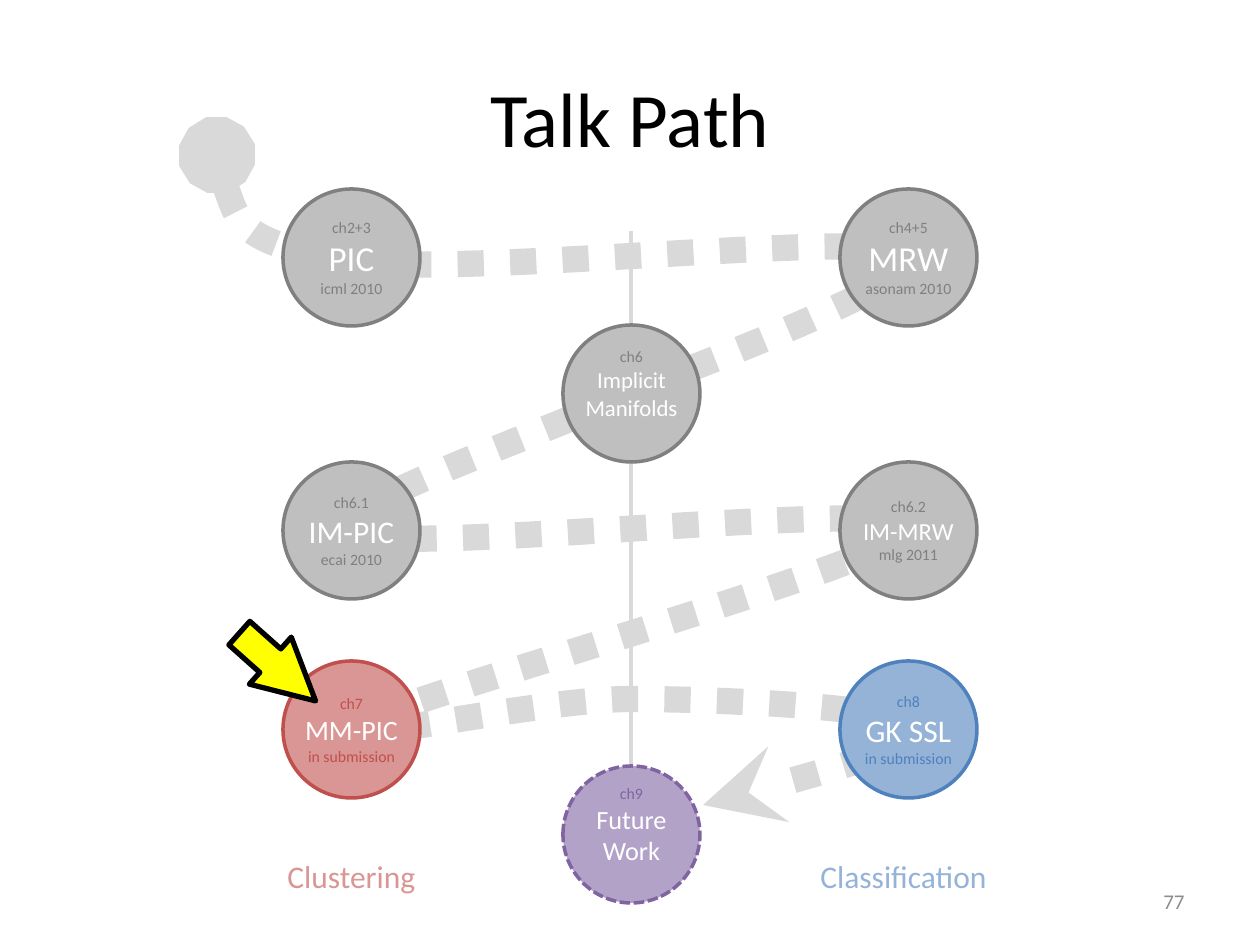
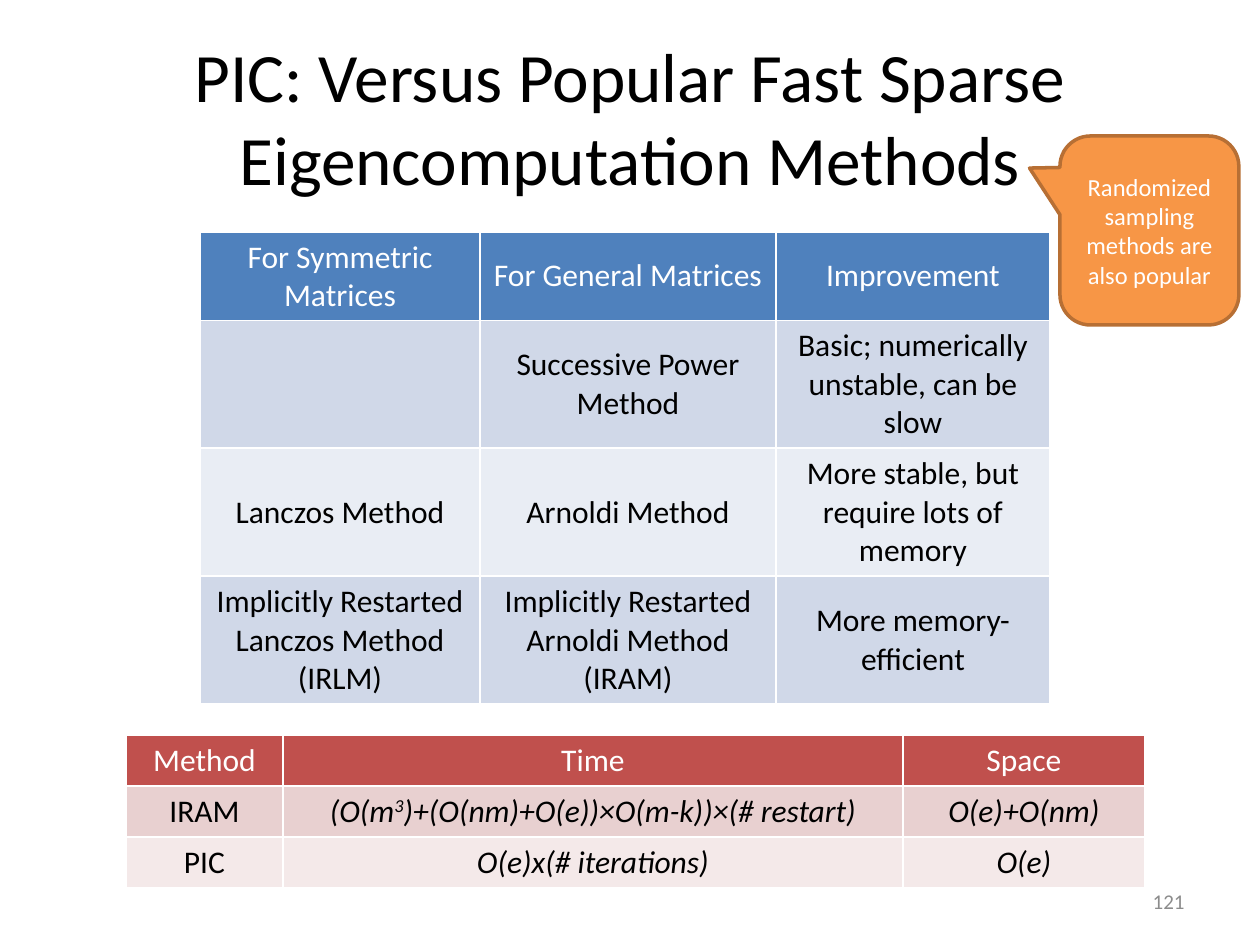
from lxml.etree import SubElement
from pptx import Presentation
from pptx.dml.color import RGBColor
from pptx.enum.dml import MSO_LINE
from pptx.enum.shapes import MSO_CONNECTOR, MSO_SHAPE
from pptx.enum.text import MSO_ANCHOR, MSO_AUTO_SIZE, PP_ALIGN
from pptx.oxml.ns import qn
from pptx.util import Emu, Pt

PX = 914400 / 126
FONT = "Calibri"
C = dict(black="000000", white="FFFFFF", number="8C8C8C", trail="D9D9D9",
         gray="808080", gray_light="BFBFBF", red="C0504D", red_light="D99694",
         blue="4F81BD", blue_light="95B3D7", purple="8064A2", purple_light="B3A2C7",
         yellow="FFFF00", orange="F79646", orange_dark="B76F34",
         blue_band="D0D8E8", blue_pale="E9EDF4", red_band="E8D0D0", red_pale="F4E9E9")

TITLE_BOX = (63, 38, 1134, 157)
NUMBER_BOX = (903, 876, 294, 50)

# Talk path
DIAMETER = 137
LEFT, MIDDLE, RIGHT = 283, 563, 840
# x, y, hue, main size, chapter, main lines, venue
STOPS = [
    (LEFT, 189, "gray", 20, "ch2+3", ["PIC"], "icml 2010"),
    (RIGHT, 189, "gray", 20, "ch4+5", ["MRW"], "asonam 2010"),
    (MIDDLE, 325, "gray", 13, "ch6", ["Implicit", "Manifolds"], None),
    (LEFT, 462, "gray", 18, "ch6.1", ["IM-PIC"], "ecai 2010"),
    (RIGHT, 462, "gray", 14, "ch6.2", ["IM-MRW"], "mlg 2011"),
    (LEFT, 661, "red", 16, "ch7", ["MM-PIC"], "in submission"),
    (RIGHT, 661, "blue", 18, "ch8", ["GK SSL"], "in submission"),
    (MIDDLE, 766, "purple", 15, "ch9", ["Future Work"], None),
]
SIDES = [("Clustering", (275, 851, 155, 50), "red_light"),
         ("Classification", (808, 851, 200, 50), "blue_light")]
DIVIDER = (631, 231, 631, 788)
TRAIL_START = (217, 155)
# Each row: two control points, then the end of the curve
TRAIL = [
    [(227, 200), (237, 244), (353, 261)],
    [(467, 277), (859, 231), (907, 252)],
    [(955, 273), (639, 388), (639, 388)],
    [(547, 435), (309, 510), (354, 533)],
    [(399, 557), (910, 496), (910, 528)],
    [(911, 559), (403, 696), (357, 725)],
    [(310, 752), (539, 698), (633, 699)],
    [(726, 699), (903, 708), (915, 726)],
    [(927, 743), (815, 775), (703, 805)],
]

# Methods
METHODS = dict(
    left=200, top=232, widths=[280, 296, 274], heights=[88, 128, 128, 128],
    fills=["blue", "blue_band", "blue_pale"],
    rows=[["For Symmetric Matrices", "For General Matrices", "Improvement"],
          ["", "Successive Power Method", "Basic; numerically unstable, can be slow"],
          ["Lanczos Method", "Arnoldi Method", "More stable, but require lots of memory"],
          ["Implicitly Restarted Lanczos Method (IRLM)",
           "Implicitly Restarted Arnoldi Method (IRAM)", "More memory-efficient"]])
IT = dict(italic=True)
COSTS = dict(
    left=126, top=735, widths=[157, 620, 242], heights=[51, 51, 51],
    fills=["red", "red_band", "red_pale"],
    rows=[["Method", "Time", "Space"],
          ["IRAM",
           [("(O(m", IT), ("3", dict(italic=True, baseline=30000)),
            (")+(O(nm)+O(e))×O(m-k))×(# restart)", IT)],
           [("O(e)+O(nm)", IT)]],
          ["PIC", [("O(e)x(# iterations)", IT)], [("O(e)", IT)]]])
CALLOUT = "Randomized sampling methods are also popular"


def px(*values):
    return [Emu(round(v * PX)) for v in values]


def rgb(name):
    return RGBColor.from_string(C[name])


def write(tf, paragraphs, align=PP_ALIGN.CENTER, **frame):
    """Fill a text frame; a paragraph is (text or [(text, format)], size, colour)."""
    for key, value in frame.items():
        setattr(tf, key, value)
    for i, (runs, size, color) in enumerate(paragraphs):
        p = tf.add_paragraph() if i else tf.paragraphs[0]
        p.alignment = align
        for text, fmt in [(runs, {})] if isinstance(runs, str) else runs:
            r = p.add_run()
            r.text = text
            font = dict(name=FONT, size=Pt(size), bold=False, **fmt)
            baseline = font.pop("baseline", None)
            for key, value in font.items():
                setattr(r.font, key, value)
            r.font.color.rgb = rgb(color)
            if baseline:
                r._r.get_or_add_rPr().set("baseline", str(baseline))


def style_line(line, color, width, dash=None):
    line.color.rgb = rgb(color)
    line.width = Pt(width)
    if dash:
        line.dash_style = dash


def add_figure(slide, kind, box, fill, line, width, dash=None, adjustments=()):
    sp = slide.shapes.add_shape(kind, *px(*box))
    sp.shadow.inherit = False
    sp.fill.solid()
    sp.fill.fore_color.rgb = rgb(fill)
    style_line(sp.line, line, width, dash)
    for i, value in enumerate(adjustments):
        sp.adjustments[i] = value
    return sp


def add_label(slide, text, box, size, color, align, **frame):
    tf = slide.shapes.add_textbox(*px(*box)).text_frame
    write(tf, [(text, size, color)], align, **frame)


def add_page(prs, title, size, number):
    slide = prs.slides.add_slide(prs.slide_layouts[5])
    sp = slide.shapes.title
    sp.left, sp.top, sp.width, sp.height = px(*TITLE_BOX)
    write(sp.text_frame, [(title, size, "black")], auto_size=MSO_AUTO_SIZE.NONE,
          vertical_anchor=MSO_ANCHOR.MIDDLE)
    add_label(slide, number, NUMBER_BOX, 12, "number", PP_ALIGN.RIGHT,
              word_wrap=True, vertical_anchor=MSO_ANCHOR.MIDDLE)
    return slide


def add_divider(slide):
    line = slide.shapes.add_connector(MSO_CONNECTOR.STRAIGHT, *px(*DIVIDER))
    style_line(line.line, "trail", 2.5)
    SubElement(line._element.spPr, qn("a:effectLst"))


def add_trail(slide):
    """Draw the dotted trail, turning each three line segments into one curve."""
    builder = slide.shapes.build_freeform(*TRAIL_START, scale=PX)
    builder.add_line_segments([pt for curve in TRAIL for pt in curve], close=False)
    sp = builder.convert_to_shape()
    sp.shadow.inherit = False
    sp.fill.background()
    style_line(sp.line, "trail", 15, MSO_LINE.ROUND_DOT)
    ln = sp._element.spPr.find(qn("a:ln"))
    for tag, kind in (("a:headEnd", "oval"), ("a:tailEnd", "stealth")):
        SubElement(ln, qn(tag), type=kind)
    segments = list(sp._element.iter(qn("a:lnTo")))
    outline = segments[0].getparent()
    for i in range(0, len(segments), 3):
        curve = SubElement(outline, qn("a:cubicBezTo"))
        for segment in segments[i:i + 3]:
            curve.append(segment[0])
            outline.remove(segment)


def add_stop(slide, x, y, hue, size, chapter, names, venue):
    dash = MSO_LINE.SQUARE_DOT if hue == "purple" else None
    sp = add_figure(slide, MSO_SHAPE.OVAL, (x, y, DIAMETER, DIAMETER),
                    hue + "_light", hue, 2, dash)
    lines = [(chapter, 9, hue)] + [(name, size, "white") for name in names]
    if venue:
        lines.append((venue, 9, hue))
    write(sp.text_frame, lines, vertical_anchor=MSO_ANCHOR.MIDDLE, word_wrap=True,
          margin_left=0, margin_right=0, margin_top=0,
          margin_bottom=0 if venue else Pt(11))


def add_grid(slide, left, top, widths, heights, fills, rows):
    box = px(left, top, sum(widths), sum(heights))
    table = slide.shapes.add_table(len(rows), len(widths), *box).table
    for col, width in zip(table.columns, px(*widths)):
        col.width = width
    for row, height in zip(table.rows, px(*heights)):
        row.height = height
    for i, texts in enumerate(rows):
        fill = fills[0] if i == 0 else fills[2 - i % 2]
        for j, text in enumerate(texts):
            cell = table.cell(i, j)
            cell.fill.solid()
            cell.fill.fore_color.rgb = rgb(fill)
            cell.vertical_anchor = MSO_ANCHOR.MIDDLE
            if text:
                write(cell.text_frame, [(text, 18, "black" if i else "white")])


def build_talk_path(prs):
    slide = add_page(prs, "Talk Path", 44, "77")
    add_divider(slide)
    add_trail(slide)
    for text, box, color in SIDES:
        add_label(slide, text, box, 18, color, PP_ALIGN.LEFT, word_wrap=False)
    for stop in STOPS:
        add_stop(slide, *stop)
    arrow = add_figure(slide, MSO_SHAPE.DOWN_ARROW, (246, 616, 63, 102),
                       "yellow", "black", 3, adjustments=(0.5, 0.96))
    arrow.rotation = 311.7


def build_methods(prs):
    slide = add_page(prs, "PIC: Versus Popular Fast Sparse Eigencomputation Methods",
                     39.6, "121")
    add_grid(slide, **METHODS)
    add_grid(slide, **COSTS)
    sp = add_figure(slide, MSO_SHAPE.ROUNDED_RECTANGULAR_CALLOUT, (1060, 136, 179, 189),
                    "orange", "orange_dark", 2, adjustments=(-0.67, -0.33, 0.17))
    write(sp.text_frame, [(CALLOUT, 14, "white")], word_wrap=True,
          vertical_anchor=MSO_ANCHOR.MIDDLE)


def main():
    prs = Presentation()
    prs.slide_width, prs.slide_height = px(1260, 945)
    build_talk_path(prs)
    build_methods(prs)
    prs.save("out.pptx")


if __name__ == "__main__":
    main()
